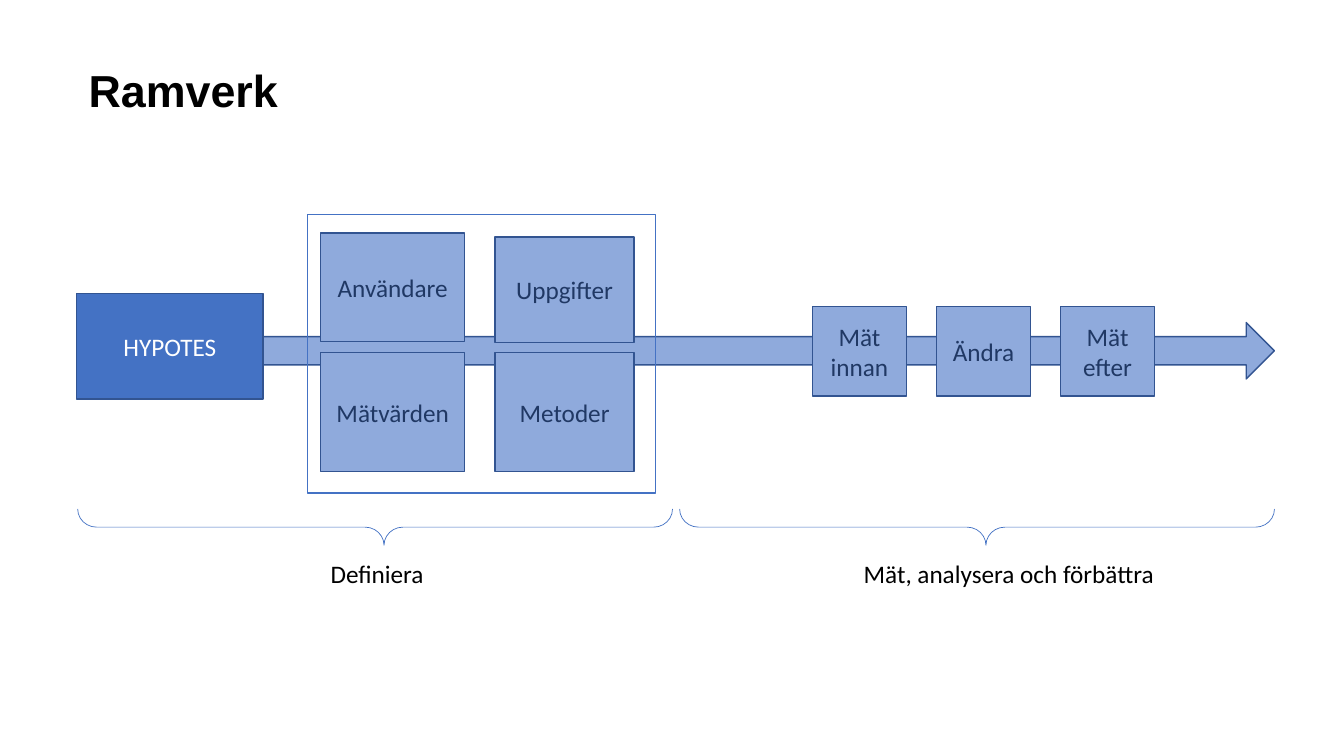
from dataclasses import dataclass

from pptx import Presentation
from pptx.dml.color import RGBColor
from pptx.enum.shapes import MSO_SHAPE as Preset
from pptx.enum.text import MSO_ANCHOR as Anchor, PP_ALIGN as Align
from pptx.util import Inches, Pt


@dataclass(frozen=True)
class Theme:
    strong: RGBColor = RGBColor(0x44, 0x72, 0xC4)
    light: RGBColor = RGBColor(0x8F, 0xAA, 0xDC)
    outline: RGBColor = RGBColor(0x32, 0x54, 0x91)
    dark_text: RGBColor = RGBColor(0x20, 0x38, 0x64)
    black: RGBColor = RGBColor(0, 0, 0)
    white: RGBColor = RGBColor(0xFF, 0xFF, 0xFF)
    title_font: str = "Arial"
    body_font: str = "Calibri"
    title_size: Pt = Pt(32)
    body_size: Pt = Pt(18)
    line: Pt = Pt(1)
    thin_line: Pt = Pt(0.5)


THEME = Theme()


def write(shape, text, align=Align.LEFT, anchor=Anchor.TOP, line_spacing=None, **font_format):
    """Fill the shape with one paragraph, in body type unless font_format differs."""
    frame = shape.text_frame
    frame.word_wrap = True
    frame.vertical_anchor = anchor
    paragraph = frame.paragraphs[0]
    paragraph.alignment = align
    paragraph.line_spacing = line_spacing
    run = paragraph.add_run()
    run.text = text
    values = {"name": THEME.body_font, "size": THEME.body_size, "bold": False} | font_format
    run.font.color.rgb = values.pop("color", THEME.black)
    for name, value in values.items():
        setattr(run.font, name, value)


def add_preset(slide, preset, box, fill=None, line=THEME.outline, width=THEME.line):
    shape = slide.shapes.add_shape(preset, *map(Inches, box))
    shape.shadow.inherit = False
    if fill is None:
        shape.fill.background()
    else:
        shape.fill.solid()
        shape.fill.fore_color.rgb = fill
    shape.line.color.rgb = line
    shape.line.width = width
    return shape


def add_step(slide, text, box, fill=THEME.light, color=THEME.dark_text):
    step = add_preset(slide, Preset.RECTANGLE, box, fill)
    write(step, text, Align.CENTER, Anchor.MIDDLE, color=color)


def add_label(slide, text, box, **text_format):
    write(slide.shapes.add_textbox(*map(Inches, box)), text, **text_format)


def add_brace(slide, left, top, length, depth):
    """Draw a brace pointing down, by turning a right brace about its centre."""
    offset = (length - depth) / 2
    box = (left + offset, top - offset, depth, length)
    brace = add_preset(slide, Preset.RIGHT_BRACE, box, line=THEME.strong, width=THEME.thin_line)
    brace.rotation = 90
    brace.adjustments[0] = 0.521
    brace.adjustments[1] = 0.485


def main():
    presentation = Presentation()
    presentation.slide_width = Inches(13.33)
    presentation.slide_height = Inches(7.5)
    slide = presentation.slides.add_slide(presentation.slide_layouts[6])

    add_preset(slide, Preset.RIGHT_ARROW, (1.15, 3.2, 11.49, 0.56), THEME.light)
    add_label(slide, "Ramverk", (0.78, 0.63, 11.1, 0.8), line_spacing=0.9,
              name=THEME.title_font, size=THEME.title_size, bold=True)

    add_step(slide, "HYPOTES", (0.76, 2.91, 1.85, 1.05), THEME.strong, THEME.white)
    for text, box in (
        ("Användare", (3.18, 2.31, 1.43, 1.08)),
        ("Uppgifter", (4.91, 2.35, 1.38, 1.05)),
        ("Mätvärden", (3.18, 3.5, 1.43, 1.18)),
        ("Metoder", (4.91, 3.5, 1.38, 1.18)),
    ):
        add_step(slide, text, box)
    for index, text in enumerate(("Mät innan", "Ändra", "Mät efter")):
        add_step(slide, text, (8.06 + 1.23 * index, 3.04, 0.93, 0.89))
    add_preset(slide, Preset.RECTANGLE, (3.05, 2.13, 3.45, 2.76), line=THEME.strong)

    add_label(slide, "Definiera", (3.18, 5.49, 1.18, 0.4))
    add_label(slide, "Mät, analysera och förbättra", (8.06, 5.49, 3.89, 0.4),
              align=Align.CENTER)
    for left in (6.74, 0.77):
        add_brace(slide, left, 5.05, 5.9, 0.36)

    presentation.save("out.pptx")


if __name__ == "__main__":
    main()
